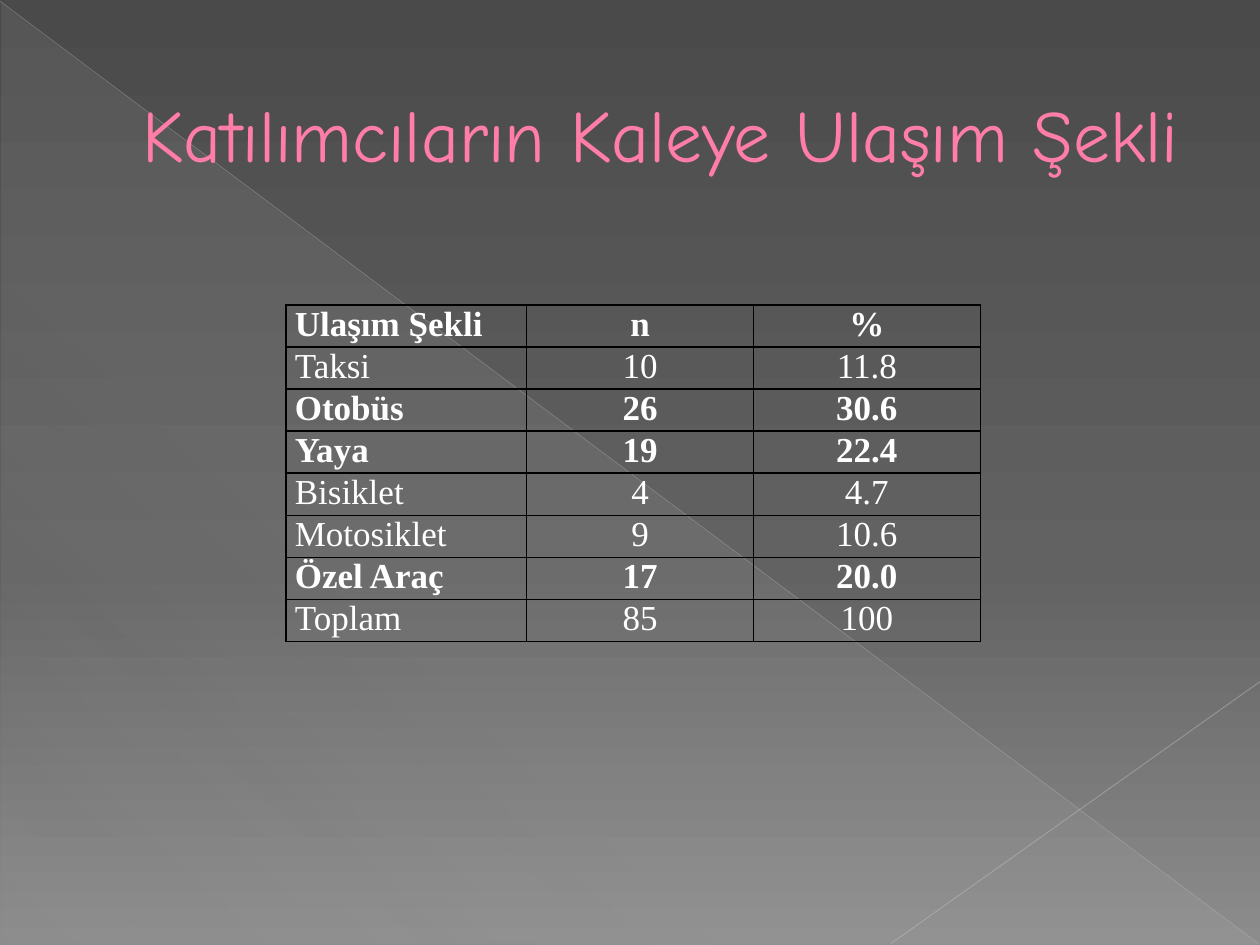
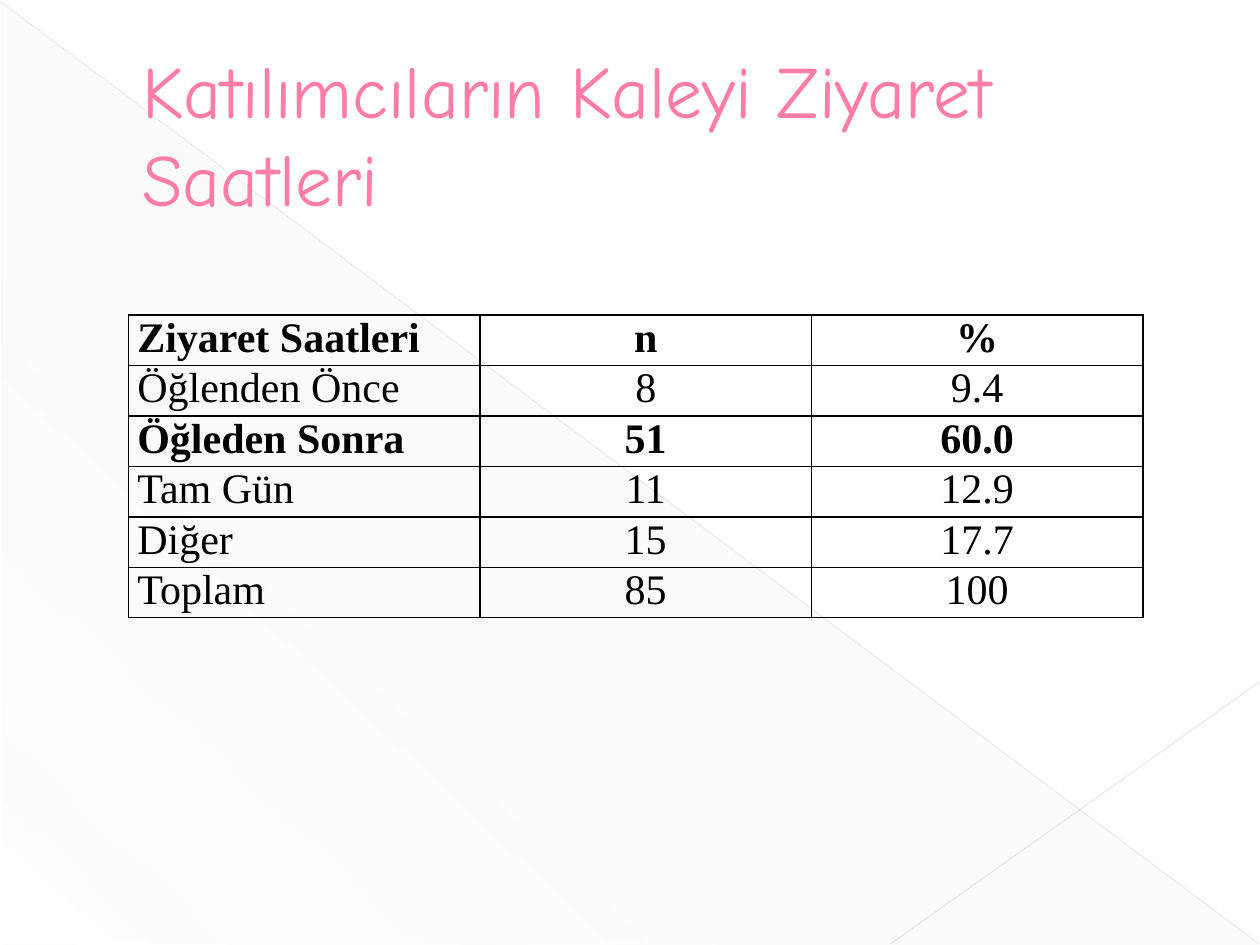
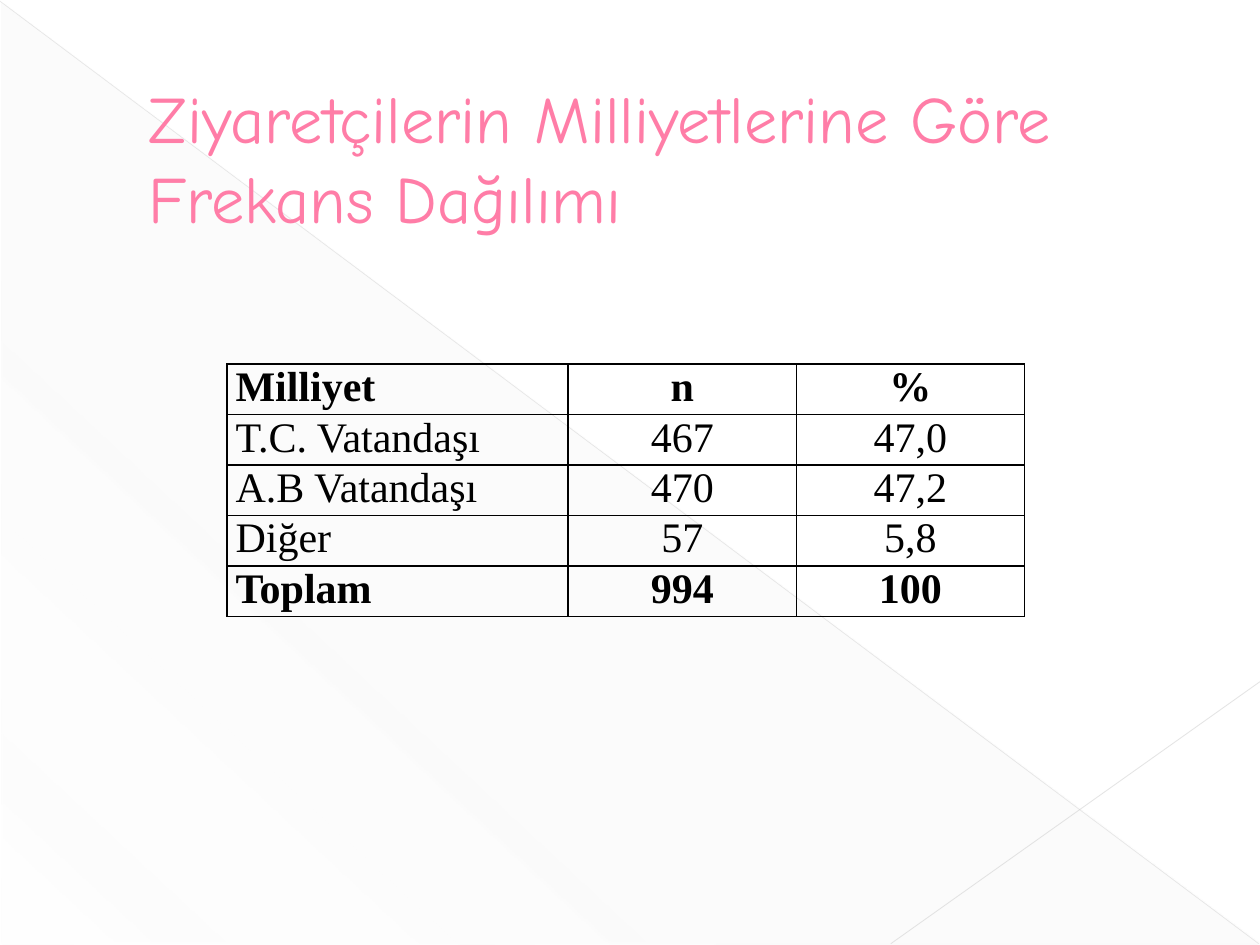
from pptx import Presentation
from pptx.dml.color import RGBColor
from pptx.enum.shapes import MSO_CONNECTOR, MSO_SHAPE
from pptx.enum.text import MSO_ANCHOR, PP_ALIGN
from pptx.oxml import parse_xml
from pptx.oxml.ns import nsdecls, qn
from pptx.util import Pt

STRAIGHT = MSO_CONNECTOR.STRAIGHT
TRIANGLE = MSO_SHAPE.RIGHT_TRIANGLE
MIDDLE = MSO_ANCHOR.MIDDLE
LEFT, CENTER = PP_ALIGN.LEFT, PP_ALIGN.CENTER

COLORS = {
    "title": "FF7DA7", "white": "FFFFFF", "black": "000000",
    "band": "D2D2D2", "diagonal": "BFBFBF", "corner": "C6C6C6",
    "dark_top": "4A4A4A", "dark_middle": "626262", "dark_bottom": "8C8C8C",
}
TITLE_FONT, TABLE_FONT = "Comic Neue", "Times New Roman"
TITLE_INDENT = 45.36
CELL_MARGINS = {"margin_left": 5.04, "margin_top": 0, "margin_right": 5.04, "margin_bottom": 0}
BORDER_WIDTH = 1
ROW_FACTOR = 1.11

DARK_STOPS = [(0, "dark_top", 100), (60, "dark_middle", 100), (100, "dark_bottom", 100)]
BAND_STOPS = [(0, "band", 10), (70, "band", 8), (100, "band", 1)]
BAND_BOX = (0.72, 1.44, 719.28, 538.56)
LINES = [
    ((0, 0.72, 719.28, 539.28), "diagonal", 0.39, 35),
    ((720, 389.52, 509.04, 539.28), "corner", 0.47, 45),
]

SLIDES = [
    {
        "title": "Katılımcıların Kaleye Ulaşım Şekli",
        "title_box": (36, 20.88, 648, 110.16), "title_size": 42,
        "dark": True, "table_at": (163.44, 174.24), "cols": (137.52, 129.6, 129.6),
        "size": 20, "bold": {0, 2, 3, 6},
        "rows": [
            ("Ulaşım Şekli", "n", "%"),
            ("Taksi", "10", "11.8"),
            ("Otobüs", "26", "30.6"),
            ("Yaya", "19", "22.4"),
            ("Bisiklet", "4", "4.7"),
            ("Motosiklet", "9", "10.6"),
            ("Özel Araç", "17", "20.0"),
            ("Toplam", "85", "100"),
        ],
    },
    {
        "title": "Katılımcıların Kaleyi Ziyaret Saatleri",
        "title_box": (36, 20.88, 648, 110.16), "title_size": 42,
        "dark": False, "table_at": (73.44, 180), "cols": (200.88, 189.36, 189.36),
        "size": 24, "bold": {0, 2},
        "rows": [
            ("Ziyaret Saatleri", "n", "%"),
            ("Öğlenden Önce", "8", "9.4"),
            ("Öğleden Sonra", "51", "60.0"),
            ("Tam Gün", "11", "12.9"),
            ("Diğer", "15", "17.7"),
            ("Toplam", "85", "100"),
        ],
    },
    {
        "title": "Ziyaretçilerin Milliyetlerine Göre Frekans Dağılımı",
        "title_box": (39.6, 44.64, 648, 90), "title_size": 37.8,
        "dark": False, "table_at": (129.6, 208.08), "cols": (195.12, 130.32, 130.32),
        "size": 24, "bold": {0, 4},
        "rows": [
            ("Milliyet", "n", "%"),
            ("T.C. Vatandaşı", "467", "47,0"),
            ("A.B Vatandaşı", "470", "47,2"),
            ("Diğer", "57", "5,8"),
            ("Toplam", "994", "100"),
        ],
    },
]


def rgb(name):
    return RGBColor.from_string(COLORS[name])


def pts(values):
    return [Pt(v) for v in values]


def set_gradient(fill, parent, stops, angle):
    fill.background()
    gs = "".join(
        f'<a:gs pos="{pos * 1000}"><a:srgbClr val="{COLORS[color]}">'
        f'<a:alpha val="{alpha * 1000}"/></a:srgbClr></a:gs>'
        for pos, color, alpha in stops
    )
    grad = parse_xml(
        f'<a:gradFill {nsdecls("a")} rotWithShape="1"><a:gsLst>{gs}</a:gsLst>'
        f'<a:lin ang="{angle * 60000}" scaled="0"/></a:gradFill>'
    )
    parent.replace(parent.find(qn("a:noFill")), grad)


def write(tf, text, align, **font):
    p = tf.paragraphs[0]
    p.alignment = align
    r = p.add_run()
    r.text = text
    color = font.pop("color")
    for key, value in font.items():
        setattr(r.font, key, value)
    r.font.color.rgb = rgb(color)


def add_backdrop(s, dark):
    fill = s.background.fill
    if dark:
        set_gradient(fill, s.element.find(".//" + qn("p:bgPr")), DARK_STOPS, 90)
    else:
        fill.solid()
        fill.fore_color.rgb = rgb("white")

    band = s.shapes.add_shape(TRIANGLE, *pts(BAND_BOX))
    band.shadow.inherit = False
    band.line.fill.background()
    set_gradient(band.fill, band.element.spPr, BAND_STOPS, 133)

    for ends, color, width, alpha in LINES:
        line = s.shapes.add_connector(STRAIGHT, *pts(ends))
        line.line.width = Pt(width)
        line.line.color.rgb = rgb(color)
        spPr = line.element.spPr
        spPr.find(".//" + qn("a:srgbClr")).append(
            parse_xml(f'<a:alpha {nsdecls("a")} val="{alpha * 1000}"/>')
        )
        spPr.append(parse_xml(f'<a:effectLst {nsdecls("a")}/>'))


def add_title(s, text, box, size):
    tf = s.shapes.add_textbox(*pts(box)).text_frame
    for key, value in {"word_wrap": True, "vertical_anchor": MIDDLE,
                       "margin_left": Pt(TITLE_INDENT)}.items():
        setattr(tf, key, value)
    write(tf, text, LEFT, name=TITLE_FONT, size=Pt(size), color="title")


def add_borders(cell):
    tcPr = cell._tc.get_or_add_tcPr()
    for i, side in enumerate("LRTB"):
        tcPr.insert(i, parse_xml(
            f'<a:ln{side} {nsdecls("a")} w="{Pt(BORDER_WIDTH)}"><a:solidFill>'
            f'<a:srgbClr val="{COLORS["black"]}"/></a:solidFill></a:ln{side}>'
        ))


def add_data_table(s, d):
    rows, cols = d["rows"], d["cols"]
    row_height = d["size"] * ROW_FACTOR
    box = (*d["table_at"], sum(cols), row_height * len(rows))
    table = s.shapes.add_table(len(rows), len(cols), *pts(box)).table
    table.first_row = table.horz_banding = False
    for column, width in zip(table.columns, cols):
        column.width = Pt(width)
    for i, row in enumerate(rows):
        table.rows[i].height = Pt(row_height)
        for j, text in enumerate(row):
            cell = table.cell(i, j)
            cell.fill.background()
            for key, value in CELL_MARGINS.items():
                setattr(cell, key, Pt(value))
            add_borders(cell)
            write(cell.text_frame, text, CENTER if j else LEFT, name=TABLE_FONT,
                  size=Pt(d["size"]), bold=i in d["bold"],
                  color="white" if d["dark"] else "black")


def main():
    prs = Presentation()
    prs.slide_width, prs.slide_height = Pt(720), Pt(540)
    for d in SLIDES:
        s = prs.slides.add_slide(prs.slide_layouts[6])
        add_backdrop(s, d["dark"])
        add_title(s, d["title"], d["title_box"], d["title_size"])
        add_data_table(s, d)
    prs.save("out.pptx")


if __name__ == "__main__":
    main()
